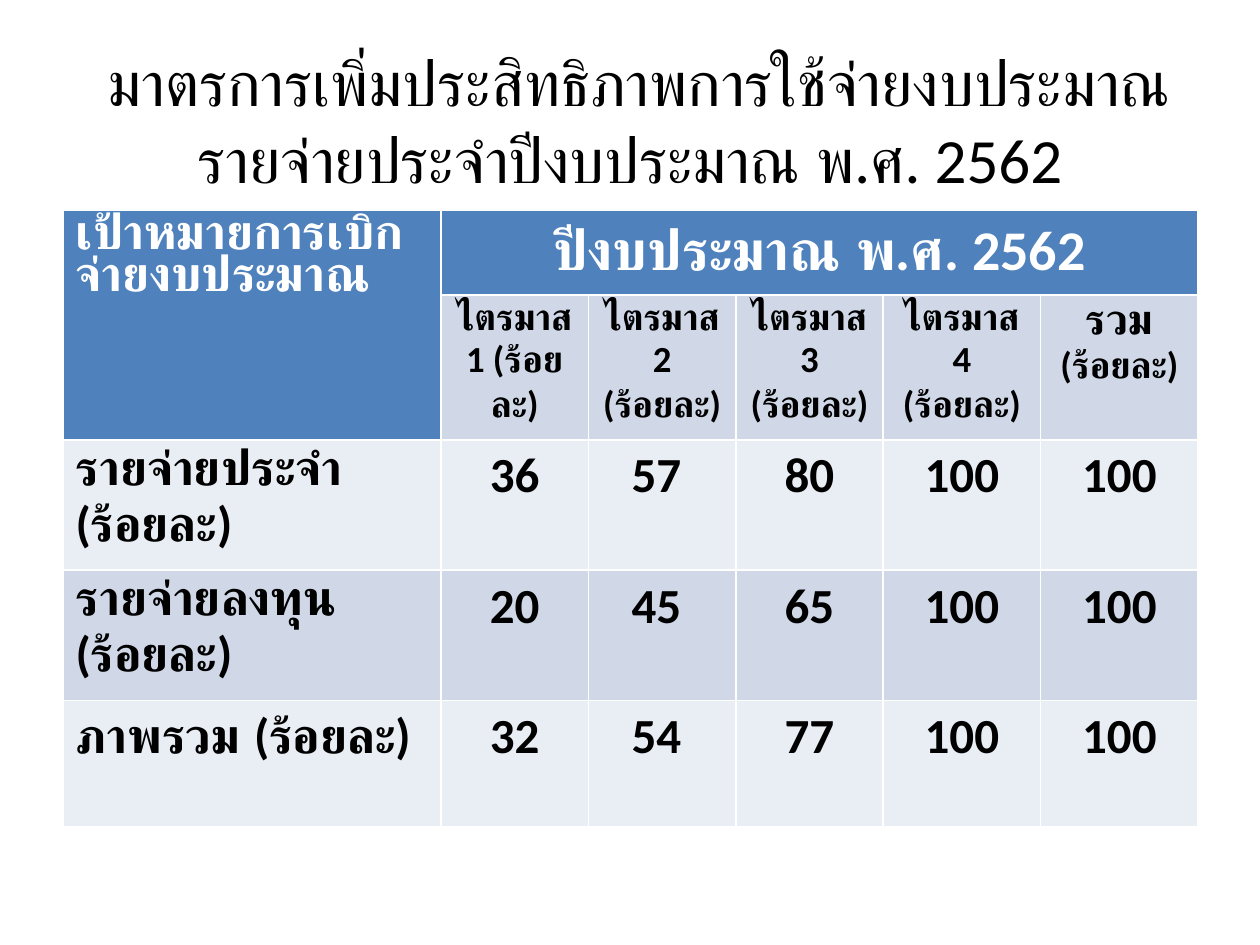
"""Build a slide with quarterly budget disbursement targets for fiscal year 2562."""
from dataclasses import dataclass

from pptx import Presentation
from pptx.dml.color import RGBColor
from pptx.enum.text import MSO_ANCHOR, PP_ALIGN
from pptx.util import Inches, Pt

LEFT, CENTER = PP_ALIGN.LEFT, PP_ALIGN.CENTER
MIDDLE = MSO_ANCHOR.MIDDLE


@dataclass(frozen=True)
class Theme:
    font: str = "Calibri"
    header_fill: str = "4F81BD"
    bands: tuple = ("D0D8E8", "E9EDF4")
    dark: str = "000000"
    light: str = "FFFFFF"
    title_size: float = 36
    title_lead_size: float = 39.6
    year_size: float = 32
    body_size: float = 28
    total_size: float = 24
    quarter_size: float = 21


THEME = Theme()


def write(paragraph, text, size=THEME.body_size, color=THEME.dark, bold=True, align=CENTER):
    paragraph.alignment = align
    run = paragraph.add_run()
    run.text = text
    run.font.name = THEME.font
    run.font.size = Pt(size)
    run.font.bold = bold
    run.font.color.rgb = RGBColor.from_string(color)


def fill_cell(cell, color):
    cell.fill.solid()
    cell.fill.fore_color.rgb = RGBColor.from_string(color)


presentation = Presentation()
presentation.slide_width, presentation.slide_height = Inches(10), Inches(7.5)
slide = presentation.slides.add_slide(presentation.slide_layouts[6])
width, height = presentation.slide_width, presentation.slide_height
margin, content_width = int(width * 0.05), int(width * 0.9)

title_box = slide.shapes.add_textbox(margin, int(height * 0.04), content_width, Inches(1.25))
title_box.text_frame.word_wrap = True
title_box.text_frame.vertical_anchor = MIDDLE
title = title_box.text_frame.paragraphs[0]
write(title, " ", size=THEME.title_lead_size, bold=False)
write(title, "มาตรการเพิ่มประสิทธิภาพการใช้จ่ายงบประมาณรายจ่ายประจำปีงบประมาณ พ.ศ. 2562",
      size=THEME.title_size, bold=False)

column_widths = [3, 1.17, 1.17, 1.17, 1.25, 1.25]
row_heights = [0.67, 0.58, 1, 1, 1]
table_shape = slide.shapes.add_table(len(row_heights), len(column_widths),
                                     margin, Inches(1.67), content_width, Inches(4.55))
table = table_shape.table
for column, column_width in zip(table.columns, column_widths):
    column.width = Inches(column_width)
for row, row_height in zip(table.rows, row_heights):
    row.height = Inches(row_height)
table_shape.height = Inches(4.55)

for row_index, row in enumerate(table.rows):
    for cell in row.cells:
        fill_cell(cell, THEME.bands[(row_index + 1) % 2] if row_index else THEME.header_fill)
target_header, year_header = table.cell(0, 0), table.cell(0, 1)
target_header.merge(table.cell(1, 0))
year_header.merge(table.cell(0, 5))
target_paragraph = target_header.text_frame.paragraphs[0]
target_paragraph.line_spacing = 0.85
write(target_paragraph, "เป้าหมายการเบิกจ่ายงบประมาณ", color=THEME.light, align=LEFT)
write(year_header.text_frame.paragraphs[0], "ปีงบประมาณ พ.ศ. 2562",
      size=THEME.year_size, color=THEME.light)

unit = "(ร้อยละ)"
write(table.cell(1, 1).text_frame.paragraphs[0], f"ไตรมาส 1 {unit}", size=THEME.quarter_size)
period_headers = [("ไตรมาส 2", THEME.quarter_size), ("ไตรมาส 3", THEME.quarter_size),
                  ("ไตรมาส 4", THEME.quarter_size), ("รวม", THEME.total_size)]
for column_index, (label, size) in enumerate(period_headers, start=2):
    text_frame = table.cell(1, column_index).text_frame
    write(text_frame.paragraphs[0], label, size=size)
    write(text_frame.add_paragraph(), unit, size=THEME.quarter_size)

targets = [
    ("รายจ่ายประจำ", "36", "57 ", "80", "100", "100"),
    ("รายจ่ายลงทุน", "20", "45 ", "65", "100", "100"),
    ("ภาพรวม", "32", "54 ", "77", "100", "100"),
]
for row_index, (label, *percentages) in enumerate(targets, start=2):
    write(table.cell(row_index, 0).text_frame.paragraphs[0], f"{label} {unit}", align=LEFT)
    for column_index, percentage in enumerate(percentages, start=1):
        write(table.cell(row_index, column_index).text_frame.paragraphs[0], percentage)

presentation.save("out.pptx")
